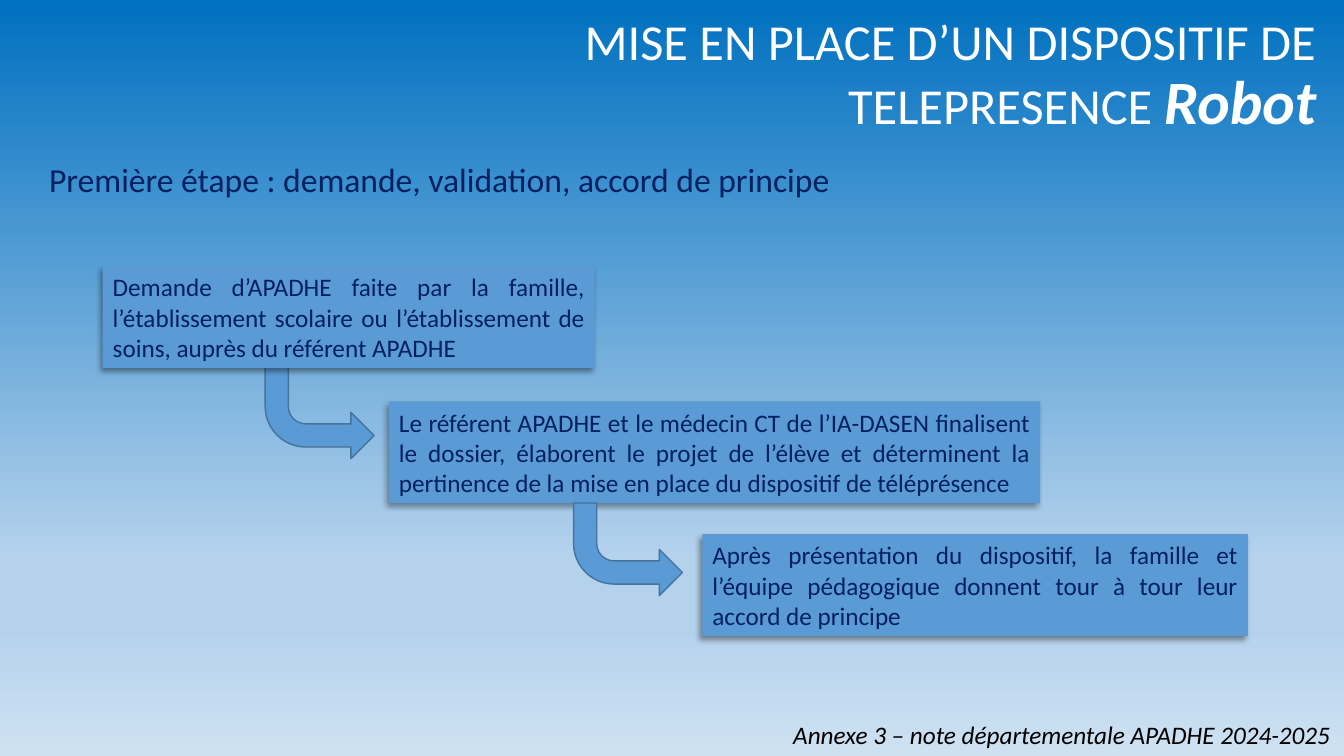
from lxml.etree import SubElement
from pptx import Presentation
from pptx.dml.color import RGBColor
from pptx.enum.shapes import MSO_SHAPE as Shape
from pptx.enum.text import MSO_ANCHOR as Anchor, MSO_AUTO_SIZE as AutoSize, PP_ALIGN as Align
from pptx.oxml.ns import qn
from pptx.util import Pt

COLORS = {"white": "FFFFFF", "black": "000000", "navy": "002060",
          "box": "5B9BD5", "arrow line": "43739E"}
SKY = [(0, "0070C0"), (74, "B5D2EC"), (83, "B5D2EC"), (100, "CEE1F2")]

# Frames are left, top, width, height in points
TITLE_FRAME = (227.5, 8.6, 720, 188)
TITLE_RUNS = [
    ("MISE EN PLACE D’UN DISPOSITIF DE TELEPRESENCE ", {"size": Pt(36), "bold": False}),
    ("Robot", {"size": Pt(44), "bold": True, "italic": True}),
]
SUBTITLE_FRAME = (28, 113, 720, 44.6)
SUBTITLE = "Première étape : demande, validation, accord de principe"
FOOTNOTE_FRAME = (559.5, 510.5, 402.5, 28.8)
FOOTNOTE = "Annexe 3 – note départementale APADHE 2024-2025"

STEP_HEIGHT = 72.7
STEPS = [  # left, top, width, text
    (73.4, 190.1, 351.4, "Demande d’APADHE faite par la famille, l’établissement scolaire "
     "ou l’établissement de soins, auprès du référent APADHE"),
    (277.9, 286.6, 465.1, "Le référent APADHE et le médecin CT de l’IA-DASEN finalisent "
     "le dossier, élaborent le projet de l’élève et déterminent la pertinence de la mise "
     "en place du dispositif de téléprésence"),
    (501.8, 381.6, 389.5, "Après présentation du dispositif, la famille et l’équipe "
     "pédagogique donnent tour à tour leur accord de principe"),
]
ARROW_SIZE = (77.8, 66.2)
FIRST_ARROW, SECOND_ARROW = (189.4, 261.4), (409.7, 359.3)


def points(values):
    return [Pt(value) for value in values]


def rgb(name):
    return RGBColor.from_string(COLORS[name])


def add_shadow(properties):
    """Give shape or run properties a soft shadow towards the lower left."""
    effects = properties.find(qn("a:effectLst"))
    if effects is None:
        effects = SubElement(properties, qn("a:effectLst"))
    shadow = SubElement(effects, qn("a:outerShdw"), blurRad=str(Pt(4)),
                        dist=str(Pt(3)), dir=str(135 * 60000), algn="tr", rotWithShape="0")
    color = SubElement(shadow, qn("a:srgbClr"), val=COLORS["black"])
    SubElement(color, qn("a:alpha"), val="40000")


def add_run(paragraph, text, color, shadow=False, **formats):
    run = paragraph.add_run()
    run.text = text
    run.font.color.rgb = rgb(color)
    if shadow:
        add_shadow(run.font._element)
    for name, value in {"name": "Calibri", **formats}.items():
        setattr(run.font, name, value)


def paint_background(slide):
    fill = slide.background.fill
    fill.gradient()
    fill.gradient_angle = 270
    stops = slide.element.find(".//" + qn("a:gsLst"))
    for stop in list(stops):
        stops.remove(stop)
    for percent, color in SKY:
        stop = SubElement(stops, qn("a:gs"), pos=str(percent * 1000))
        SubElement(stop, qn("a:srgbClr"), val=color)


def add_title(slide):
    title = slide.shapes.title
    title.left, title.top, title.width, title.height = points(TITLE_FRAME)
    frame = title.text_frame
    frame.word_wrap, frame.auto_size, frame.vertical_anchor = True, AutoSize.NONE, Anchor.TOP
    paragraph = frame.paragraphs[0]
    paragraph.alignment, paragraph.line_spacing = Align.RIGHT, 0.9
    for text, formats in TITLE_RUNS:
        add_run(paragraph, text, "white", shadow=True, **formats)


def add_textbox(slide, frame, text, color, wrap, spacing=1.0, **formats):
    box = slide.shapes.add_textbox(*points(frame))
    box.text_frame.word_wrap = wrap
    paragraph = box.text_frame.paragraphs[0]
    paragraph.line_spacing = spacing
    add_run(paragraph, text, color, **formats)


def add_step(slide, left, top, width, text):
    box = slide.shapes.add_shape(Shape.RECTANGLE, *points((left, top, width, STEP_HEIGHT)))
    box.fill.solid()
    box.fill.fore_color.rgb = rgb("box")
    box.line.fill.background()
    box.shadow.inherit = False
    add_shadow(box.element.spPr)
    box.text_frame.word_wrap = True
    paragraph = box.text_frame.paragraphs[0]
    paragraph.alignment = Align.JUSTIFY
    add_run(paragraph, text, "navy", size=Pt(18))


def add_arrow(slide, position):
    arrow = slide.shapes.add_shape(Shape.BENT_ARROW, *points(position + ARROW_SIZE))
    arrow.element.spPr.xfrm.set("flipV", "1")
    arrow.shadow.inherit = False
    arrow.fill.solid()
    arrow.fill.fore_color.rgb = rgb("box")
    arrow.line.color.rgb = rgb("arrow line")
    arrow.line.width = Pt(1)


def main():
    presentation = Presentation()
    presentation.slide_width, presentation.slide_height = Pt(960), Pt(540)
    slide = presentation.slides.add_slide(presentation.slide_layouts[5])
    paint_background(slide)
    add_title(slide)
    add_textbox(slide, SUBTITLE_FRAME, SUBTITLE, "navy", True, 0.9, shadow=True, size=Pt(24))
    add_arrow(slide, FIRST_ARROW)
    for step in STEPS:
        add_step(slide, *step)
    add_arrow(slide, SECOND_ARROW)
    add_textbox(slide, FOOTNOTE_FRAME, FOOTNOTE, "black", False, size=Pt(18), italic=True)
    presentation.save("out.pptx")


if __name__ == "__main__":
    main()
